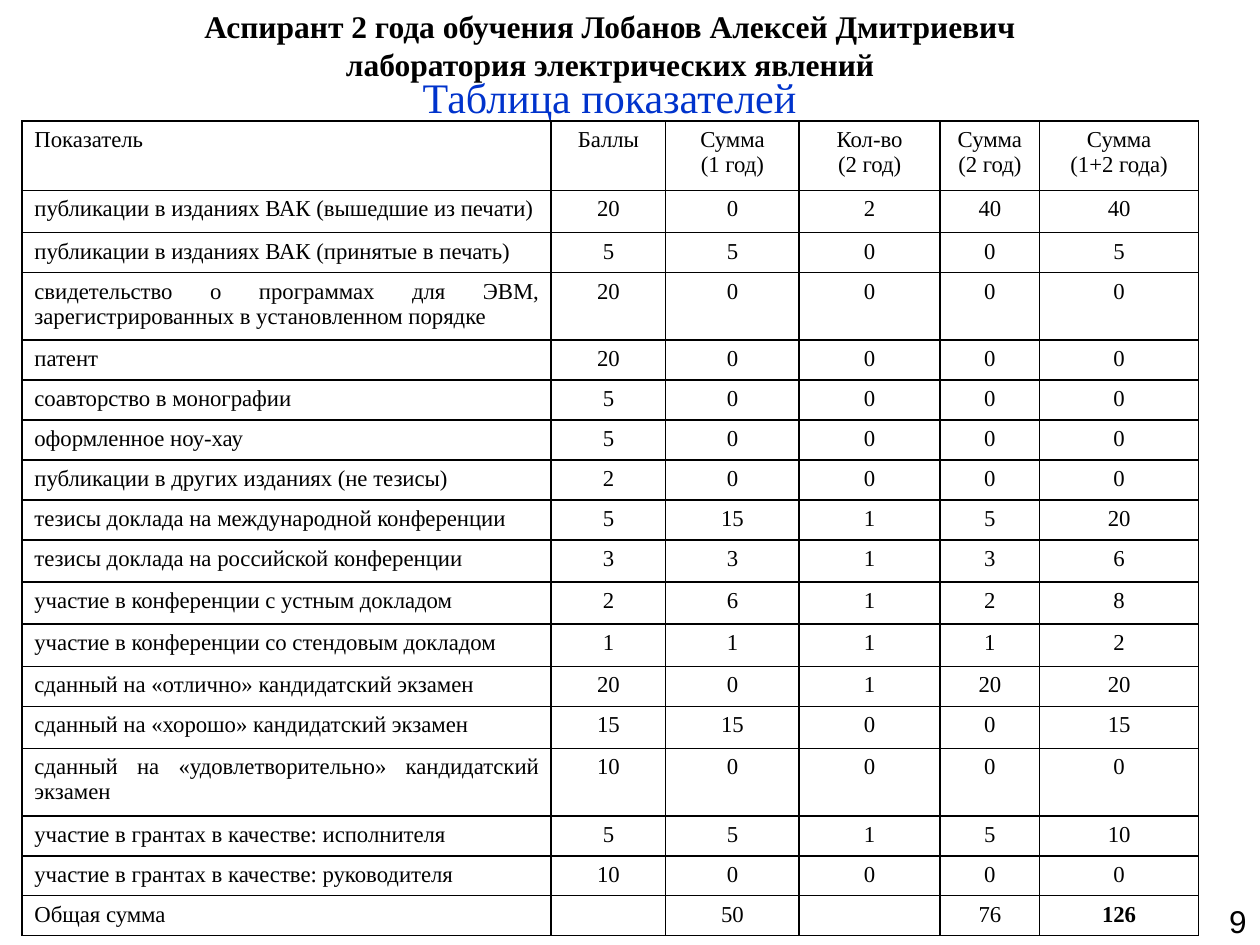
import pptx
import pptx.dml.color
import pptx.enum.text
import pptx.oxml.ns
import pptx.util
from lxml import etree

Cm = pptx.util.Cm
Pt = pptx.util.Pt
ALIGN = pptx.enum.text.PP_ALIGN
ANCHOR = pptx.enum.text.MSO_ANCHOR
qn = pptx.oxml.ns.qn

BLACK = pptx.dml.color.RGBColor(0x00, 0x00, 0x00)
BLUE = pptx.dml.color.RGBColor(0x00, 0x33, 0xCC)
SERIF = "Times New Roman"
SANS = "Arial"
TABLE_SIZE = 13

HEADING = ("Аспирант 2 года обучения Лобанов Алексей Дмитриевич\v"
           "лаборатория электрических явлений")
SUBHEADING = "Таблица показателей"
PAGE_NUMBER = "9"

COLUMNS = [
    ("Показатель", 10.67),
    ("Баллы", 2.31),
    ("Сумма\n(1 год)", 2.69),
    ("Кол-во\n(2 год)", 2.84),
    ("Сумма\n(2 год)", 2.01),
    ("Сумма\n(1+2 года)", 3.2),
]
INDICATORS = [
    ("публикации в изданиях ВАК (вышедшие из печати)", 20, 0, 2, 40, 40),
    ("публикации в изданиях ВАК (принятые в печать)", 5, 5, 0, 0, 5),
    ("свидетельство о программах для ЭВМ, зарегистрированных "
     "в установленном порядке", 20, 0, 0, 0, 0),
    ("патент", 20, 0, 0, 0, 0),
    ("соавторство в монографии", 5, 0, 0, 0, 0),
    ("оформленное ноу-хау", 5, 0, 0, 0, 0),
    ("публикации в других изданиях (не тезисы)", 2, 0, 0, 0, 0),
    ("тезисы доклада на международной конференции", 5, 15, 1, 5, 20),
    ("тезисы доклада на российской конференции", 3, 3, 1, 3, 6),
    ("участие в конференции с устным докладом", 2, 6, 1, 2, 8),
    ("участие в конференции со стендовым докладом", 1, 1, 1, 1, 2),
    ("сданный на «отлично» кандидатский экзамен", 20, 0, 1, 20, 20),
    ("сданный на «хорошо» кандидатский экзамен", 15, 15, 0, 0, 15),
    ("сданный на «удовлетворительно» кандидатский экзамен", 10, 0, 0, 0, 0),
    ("участие в грантах в качестве: исполнителя", 5, 5, 1, 5, 10),
    ("участие в грантах в качестве: руководителя", 10, 0, 0, 0, 0),
]
TOTALS = ("Общая сумма", "", 50, "", 76, 126)

ROW_HEIGHT = 0.8
TALLER_ROWS = {0: 1.4, 1: 0.85, 3: 1.35, 9: 0.85, 10: 0.85, 11: 0.85,
               13: 0.85, 14: 1.35}


def write(text_frame, text, size, align, font=SERIF, color=BLACK, bold=False):
    text_frame.text = text
    for paragraph in text_frame.paragraphs:
        paragraph.alignment = align
        for run in paragraph.runs:
            run.font.name = font
            run.font.size = Pt(size)
            run.font.bold = bold
            run.font.color.rgb = color


def add_label(slide, left, top, width, height, text, size, align, **style):
    frame = slide.shapes.add_textbox(
        Cm(left), Cm(top), Cm(width), Cm(height)).text_frame
    frame.word_wrap = True
    write(frame, text, size, align, **style)


def outline(cell):
    """Draw a thin black border on all four sides and leave the cell unfilled."""
    properties = cell._tc.get_or_add_tcPr()
    for side in ("a:lnL", "a:lnR", "a:lnT", "a:lnB"):
        line = etree.SubElement(properties, qn(side), w=str(Pt(1)))
        fill = etree.SubElement(line, qn("a:solidFill"))
        etree.SubElement(fill, qn("a:srgbClr"), val=str(BLACK))
    cell.fill.background()


def add_indicator_table(slide):
    rows = [[heading for heading, _ in COLUMNS], *INDICATORS, TOTALS]
    heights = [TALLER_ROWS.get(i, ROW_HEIGHT) for i in range(len(rows))]
    table = slide.shapes.add_table(
        len(rows), len(COLUMNS), Cm(0.44), Cm(2.44),
        Cm(sum(width for _, width in COLUMNS)), Cm(sum(heights))).table
    table.horz_banding = False
    table.first_row = False
    for column, (_, width) in zip(table.columns, COLUMNS):
        column.width = Cm(width)
    for r, (values, height) in enumerate(zip(rows, heights)):
        table.rows[r].height = Cm(height)
        for c, value in enumerate(values):
            cell = table.cell(r, c)
            grand_total = values is TOTALS and c == len(COLUMNS) - 1
            write(cell.text_frame, str(value), TABLE_SIZE,
                  ALIGN.CENTER if c else ALIGN.JUSTIFY, bold=grand_total)
            if value == "":
                # keeps an empty cell from stretching its row
                etree.SubElement(cell.text_frame.paragraphs[0]._p,
                                 qn("a:endParaRPr"), sz=str(TABLE_SIZE * 100))
            outline(cell)


def main():
    presentation = pptx.Presentation()
    presentation.slide_width = Cm(25.4)
    presentation.slide_height = Cm(19.05)
    slide = presentation.slides.add_slide(presentation.slide_layouts[5])

    title = slide.shapes.title
    title.left, title.top = Cm(1.5), Cm(0)
    title.width, title.height = Cm(21.6), Cm(1.8)
    title.text_frame.auto_size = pptx.enum.text.MSO_AUTO_SIZE.NONE
    title.text_frame.vertical_anchor = ANCHOR.MIDDLE
    write(title.text_frame, HEADING, 18, ALIGN.CENTER, bold=True)

    add_label(slide, 3.4, 1.32, 17.78, 1.2, SUBHEADING, 24, ALIGN.CENTER,
              color=BLUE)
    add_indicator_table(slide)
    add_label(slide, 19.66, 18.06, 5.72, 0.76, PAGE_NUMBER, 18, ALIGN.RIGHT,
              font=SANS)

    presentation.save("out.pptx")


if __name__ == "__main__":
    main()
